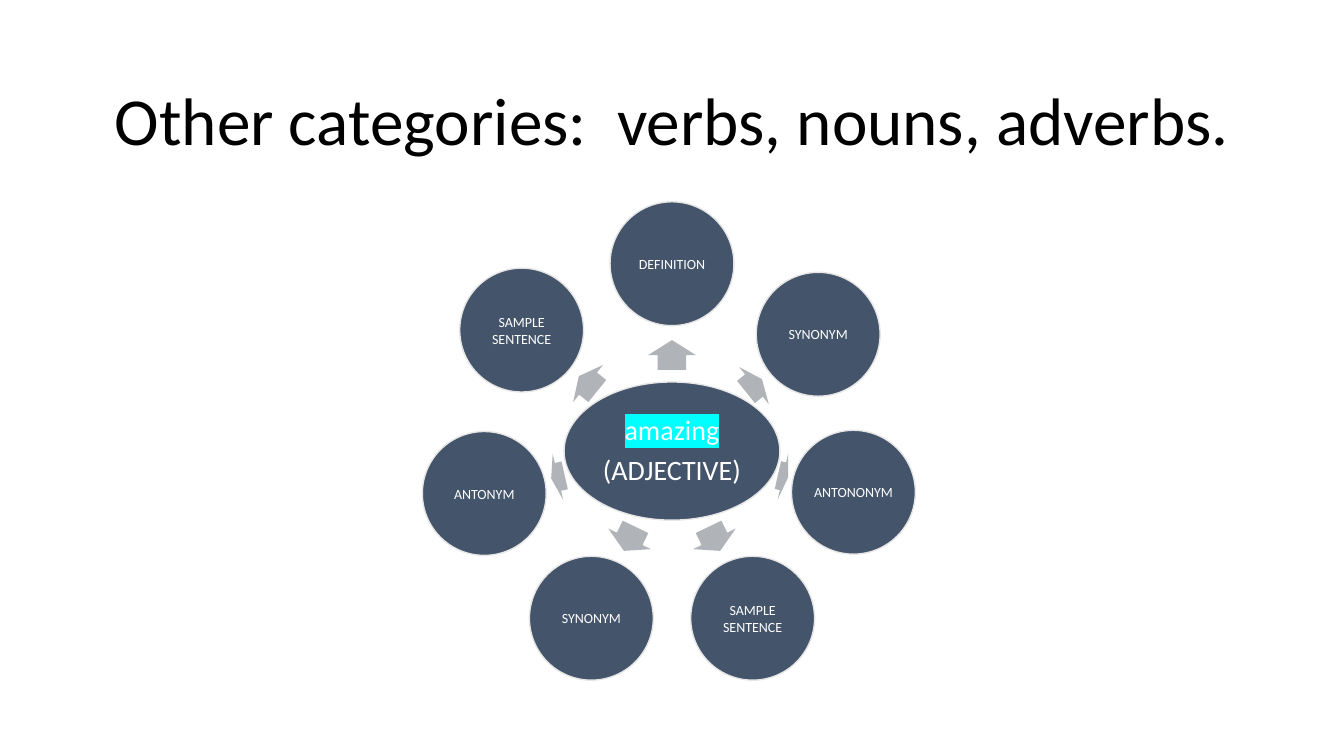
from math import atan2, cos, degrees, hypot, sin

from lxml.etree import SubElement
from pptx import Presentation
from pptx.dml.color import RGBColor as RGB
from pptx.enum.shapes import MSO_SHAPE as SHAPE
from pptx.enum.text import MSO_ANCHOR as ANCHOR, PP_ALIGN as ALIGN
from pptx.oxml.ns import qn
from pptx.util import Inches, Pt

COLORS = {"navy": "44546A", "edge": "E7E6E6", "arrow": "B0B4B9",
          "white": "FFFFFF", "black": "000000", "cyan": "00FFFF"}
FONT = "Calibri"
COLS, ROWS = 32, 18
HUB = (16, 10.74)
HUB_SIZE = (5.14, 3.29)
NODE_SIZE = 2.95
ARROW_WIDTH = 1.13
NODES = [("DEFINITION", 16, 6.28), ("SYNONYM", 19.48, 7.96),
         ("ANTONONYM", 20.32, 11.72), ("SAMPLE SENTENCE", 17.92, 14.72),
         ("SYNONYM", 14.08, 14.72), ("ANTONYM", 11.53, 11.75),
         ("SAMPLE SENTENCE", 12.42, 7.86)]


def write(tf, *lines, size, color="white", inset=None, spacing=1.0, after=0, marked=None):
    tf.word_wrap = True
    tf.vertical_anchor = ANCHOR.MIDDLE
    if inset is not None:
        tf.margin_left = tf.margin_right = tf.margin_top = tf.margin_bottom = Inches(inset)
    for i, line in enumerate(lines):
        p = tf.add_paragraph() if i else tf.paragraphs[0]
        p.alignment, p.line_spacing, p.space_after = ALIGN.CENTER, spacing, Pt(after)
        r = p.add_run()
        r.text = line
        r.font.size = Pt(size)
        r.font.color.rgb = RGB.from_string(COLORS[color])
        if line == marked:
            mark = SubElement(r.font._element, qn("a:highlight"))
            SubElement(mark, qn("a:srgbClr"), val=COLORS["cyan"])
        r.font.name = FONT


class WordWeb:
    """Draws a word web on one slide, measured in grid columns and rows."""

    def __init__(self, prs):
        self.s = prs.slides.add_slide(prs.slide_layouts[6])
        self.col = prs.slide_width / COLS
        self.row = prs.slide_height / ROWS

    def box(self, x, y, w, h):
        return [round(v) for v in (x * self.col, y * self.row, w * self.col, h * self.row)]

    def title(self, text, x, y, w, h):
        tf = self.s.shapes.add_textbox(*self.box(x, y, w, h)).text_frame
        write(tf, text, size=48, color="black", spacing=0.9, after=6)

    def shape(self, kind, cx, cy, w, h, fill):
        sp = self.s.shapes.add_shape(kind, *self.box(cx - w / 2, cy - h / 2, w, h))
        sp.shadow.inherit = False
        sp.fill.solid()
        sp.fill.fore_color.rgb = RGB.from_string(COLORS[fill])
        sp.line.fill.background()
        return sp

    def ellipse(self, center, extent, *lines, **style):
        sp = self.shape(SHAPE.OVAL, *center, *extent, "navy")
        sp.line.color.rgb = RGB.from_string(COLORS["edge"])
        sp.line.width = Pt(1)
        write(sp.text_frame, *lines, **style)

    def arrow(self, x, y):
        dx, dy = x - HUB[0], y - HUB[1]
        angle = atan2(dy, dx)
        hub_edge = 1 / hypot(cos(angle) * 2 / HUB_SIZE[0], sin(angle) * 2 / HUB_SIZE[1])
        gap = hypot(dx, dy) - NODE_SIZE / 2 - hub_edge
        reach = hub_edge + 0.48 * gap
        sp = self.shape(SHAPE.RIGHT_ARROW, HUB[0] + reach * cos(angle),
                        HUB[1] + reach * sin(angle), 0.53 * gap, ARROW_WIDTH, "arrow")
        sp.adjustments[0], sp.adjustments[1] = 0.6, 0.5
        sp.rotation = degrees(angle) % 360


def main():
    prs = Presentation()
    prs.slide_width, prs.slide_height = Inches(13.33), Inches(7.5)
    web = WordWeb(prs)
    web.title("Other categories:  verbs, nouns, adverbs.", 2.2, 1.46, 27.6, 2.98)
    web.ellipse(HUB, HUB_SIZE, "amazing", "(ADJECTIVE)", size=20, inset=0.03,
                spacing=0.9, after=7, marked="amazing")
    for label, x, y in NODES:
        web.arrow(x, y)
        web.ellipse((x, y), (NODE_SIZE, NODE_SIZE), label, size=10, inset=0.01, after=3.5)
    prs.save("out.pptx")


if __name__ == "__main__":
    main()
